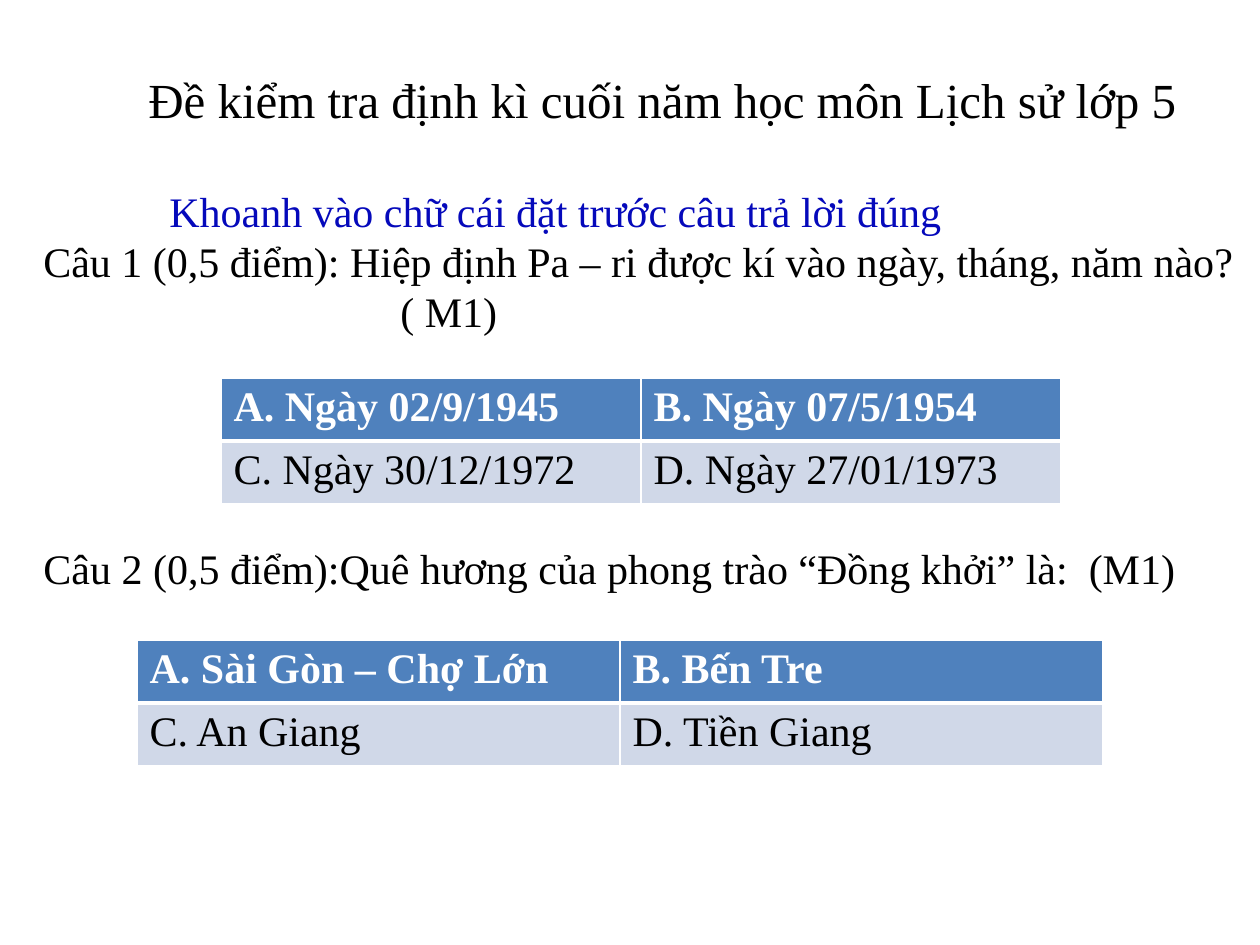
from lxml.etree import SubElement
from pptx import Presentation
from pptx.dml.color import RGBColor as RGB
from pptx.oxml.ns import qn
from pptx.util import Pt

PX = 914400 // 126
THEME = {
    "font": "Times New Roman",
    "title": Pt(28), "body": Pt(24),
    "black": RGB(0, 0, 0), "white": RGB(255, 255, 255),
    "blue": RGB(0x05, 0x09, 0xBB),
    "header": RGB(0x4F, 0x81, 0xBD), "band": RGB(0xD0, 0xD8, 0xE8),
}
ROW_HEIGHT = 63


def write(paragraph, words, size="body", color="black", bold=False):
    run = paragraph.add_run()
    run.text = words
    style = {"name": THEME["font"], "size": THEME[size], "bold": bold}
    for key, value in style.items():
        setattr(run.font, key, value)
    run.font.color.rgb = THEME[color]


def add_borders(cell, widths):
    """Give the cell white edges; widths maps a side letter to points."""
    properties = cell._tc.get_or_add_tcPr()
    for side, points in widths.items():
        edge = SubElement(properties, qn(f"a:ln{side}"), w=str(Pt(points)))
        fill = SubElement(edge, qn("a:solidFill"))
        SubElement(fill, qn("a:srgbClr"), val=str(THEME["white"]))


prs = Presentation()
prs.slide_width, prs.slide_height = 1260 * PX, 945 * PX
slide = prs.slides.add_slide(prs.slide_layouts[6])

# Each line: words, size, colour, left indent
texts = [
    ((136, 63, 1124, 72), [
        ("Đề kiểm tra định kì cuối năm học môn Lịch sử lớp 5", "title", "black", 0)]),
    ((31, 179, 1250, 204), [
        ("Khoanh vào chữ cái đặt trước câu trả lời đúng", "body", "blue", 126),
        ("Câu 1 (0,5 điểm): Hiệp định Pa – ri được kí vào ngày, tháng, năm nào?",
         "body", "black", 0),
        ("( M1)", "body", "black", 357)]),
    ((31, 536, 1418, 63), [
        ("Câu 2 (0,5 điểm):Quê hương của phong trào “Đồng khởi” là:  (M1)",
         "body", "black", 0)]),
]
for place, lines in texts:
    frame = slide.shapes.add_textbox(*(n * PX for n in place)).text_frame
    frame.word_wrap = True
    for i, (words, size, color, indent) in enumerate(lines):
        paragraph = frame.add_paragraph() if i else frame.paragraphs[0]
        if indent:
            paragraph._p.get_or_add_pPr().set("marL", str(indent * PX))
        write(paragraph, words, size, color)

# Each answer grid: left, top, column width, rows of choices
answers = [
    (221, 378, 420, [("A. Ngày 02/9/1945", "B. Ngày 07/5/1954"),
                     ("C. Ngày 30/12/1972", "D. Ngày 27/01/1973")]),
    (137, 640, 483, [("A. Sài Gòn – Chợ Lớn", "B. Bến Tre"),
                     ("C. An Giang", "D. Tiền Giang")]),
]
row_styles = [
    {"fill": "header", "color": "white", "bold": True,
     "borders": {"L": 1, "R": 1, "T": 1, "B": 3}},
    {"fill": "band", "color": "black", "bold": False,
     "borders": {"L": 1, "R": 1, "T": 3, "B": 1}},
]
for left, top, column_width, rows in answers:
    grid = slide.shapes.add_table(
        2, 2, left * PX, top * PX, 2 * column_width * PX, 2 * ROW_HEIGHT * PX).table
    for r, (choices, style) in enumerate(zip(rows, row_styles)):
        for c, choice in enumerate(choices):
            cell = grid.cell(r, c)
            write(cell.text_frame.paragraphs[0], choice,
                  color=style["color"], bold=style["bold"])
            add_borders(cell, style["borders"])
            cell.fill.solid()
            cell.fill.fore_color.rgb = THEME[style["fill"]]

prs.save("out.pptx")
